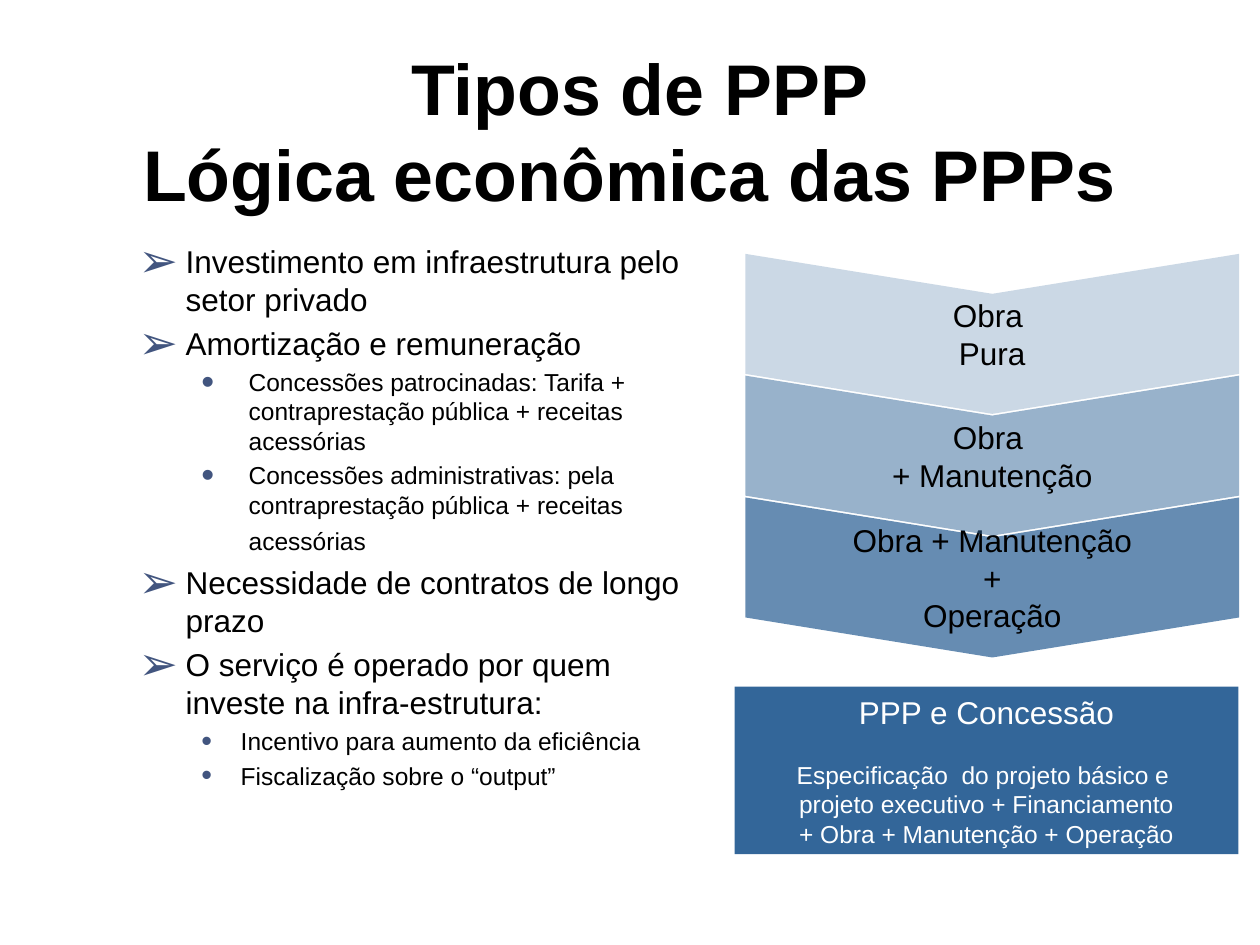
import pptx
import pptx.util
import pptx.dml.color
import pptx.enum.shapes
import pptx.enum.text
import pptx.oxml.ns
import lxml.etree

Pt = pptx.util.Pt
CENTER = pptx.enum.text.PP_ALIGN.CENTER
TOP = pptx.enum.text.MSO_ANCHOR.TOP
MIDDLE = pptx.enum.text.MSO_ANCHOR.MIDDLE
SHAPES = pptx.enum.shapes.MSO_SHAPE
BLACK = pptx.dml.color.RGBColor(0x00, 0x00, 0x00)
WHITE = pptx.dml.color.RGBColor(0xFF, 0xFF, 0xFF)
BLUE = pptx.dml.color.RGBColor(0x33, 0x66, 0x99)
BULLET = pptx.dml.color.RGBColor(0x42, 0x55, 0x7F)


def write(para, text, size, color, **formats):
    """Fill a paragraph with one run of text; formats go to the paragraph."""
    span = para.add_run()
    span.text = text
    span.font.color.rgb = color
    for name, value in {"name": "Arial", "size": Pt(size)}.items():
        setattr(span.font, name, value)
    for name, value in formats.items():
        setattr(para, name, value)
    return span


def add_child(parent, tag, **attributes):
    """Append a DrawingML element."""
    return lxml.etree.SubElement(parent, pptx.oxml.ns.qn(tag), attributes)


deck = pptx.Presentation()
deck.slide_width, deck.slide_height = Pt(720), Pt(540)
page = deck.slides.add_slide(deck.slide_layouts[5])

# Title
title = page.shapes.title
for name, value in {"left": 36, "top": 21.6, "width": 648, "height": 90}.items():
    setattr(title, name, Pt(value))
title.text_frame.vertical_anchor = TOP
title.text_frame.auto_size = pptx.enum.text.MSO_AUTO_SIZE.NONE
para = title.text_frame.paragraphs[0]
write(para, " Tipos de PPP", 41, BLACK, alignment=CENTER).font.bold = True
para.add_line_break()
write(para, "Lógica econômica das PPPs", 41, BLACK).font.bold = True

# Summary box
box = page.shapes.add_shape(SHAPES.RECTANGLE, Pt(419.76), Pt(392.4), Pt(288), Pt(95.76))
box.shadow.inherit = False
box.fill.solid()
box.fill.fore_color.rgb = BLUE
box.line.fill.background()
box.text_frame.word_wrap = False
box.text_frame.vertical_anchor = MIDDLE
summary = [
    ("PPP e Concessão", 18, 0),
    ("Especificação  do projeto básico e ", 14, 16.8),
    ("projeto executivo + Financiamento", 14, 0),
    ("+ Obra + Manutenção + Operação", 14, 0),
]
for index, (text, size, gap) in enumerate(summary):
    para = box.text_frame.paragraphs[0] if index == 0 else box.text_frame.add_paragraph()
    write(para, text, size, WHITE, alignment=CENTER, space_before=Pt(gap))

# Chevrons pointing down, each stage more opaque than the one above
stages = [
    ["Obra ", "Pura"],
    ["Obra ", "+ Manutenção"],
    ["Obra + Manutenção", "+", "Operação"],
]
for step, lines in reversed(list(enumerate(stages))):
    chevron = page.shapes.add_shape(
        SHAPES.CHEVRON, Pt(521.28), Pt(49.68 + 69.6 * step), Pt(91.44), Pt(282.24))
    chevron.rotation = 90
    chevron.adjustments[0] = 0.25
    chevron.shadow.inherit = False
    chevron.fill.solid()
    chevron.fill.fore_color.rgb = BLUE
    tint = chevron.fill._xPr.find(".//" + pptx.oxml.ns.qn("a:srgbClr"))
    add_child(tint, "a:alpha", val=str(25000 * (step + 1)))
    chevron.line.fill.background()
    frame = chevron.text_frame
    frame.vertical_anchor = MIDDLE
    frame._txBody.bodyPr.set("vert", "vert270")
    for index, text in enumerate(lines):
        para = frame.paragraphs[0] if index == 0 else frame.add_paragraph()
        write(para, text, 18, BLACK, alignment=CENTER)

# Bulleted list: level, left edge of text, hanging indent, mark, mark size, text size, gap
main = (0, 27, 27, "➢", 150, 18, 3.6)
concession = (1, 63, 27, "•", 150, 14, 3)
effect = (1, 58.5, 22.5, "•", 125, 14, 3)
items = [
    (main, "Investimento em infraestrutura pelo setor privado"),
    (main, "Amortização e remuneração"),
    (concession, "Concessões patrocinadas: Tarifa + contraprestação pública + receitas acessórias"),
    (concession, "Concessões administrativas: pela contraprestação pública + receitas acessórias"),
    (main, "Necessidade de contratos de longo prazo"),
    (main, "O serviço é operado por quem investe na infra-estrutura:"),
    (effect, "Incentivo para aumento da eficiência"),
    (effect, "Fiscalização sobre o “output”"),
]
box = page.shapes.add_textbox(Pt(72), Pt(134.64), Pt(324), Pt(365.76))
box.text_frame.word_wrap = True
for index, (style, text) in enumerate(items):
    level, left, hanging, mark, mark_size, size, gap = style
    para = box.text_frame.paragraphs[0] if index == 0 else box.text_frame.add_paragraph()
    write(para, text, size, BLACK, level=level, space_before=Pt(gap if index else 0))
    if index == 3:
        write(para, " ", 18, BLACK)
    properties = para._p.get_or_add_pPr()
    properties.set("marL", str(Pt(left)))
    properties.set("indent", str(-Pt(hanging)))
    add_child(add_child(properties, "a:buClr"), "a:srgbClr", val=str(BULLET))
    add_child(properties, "a:buSzPct", val=str(mark_size * 1000))
    add_child(properties, "a:buFont", typeface="Arial")
    add_child(properties, "a:buChar", char=mark)

deck.save("out.pptx")
